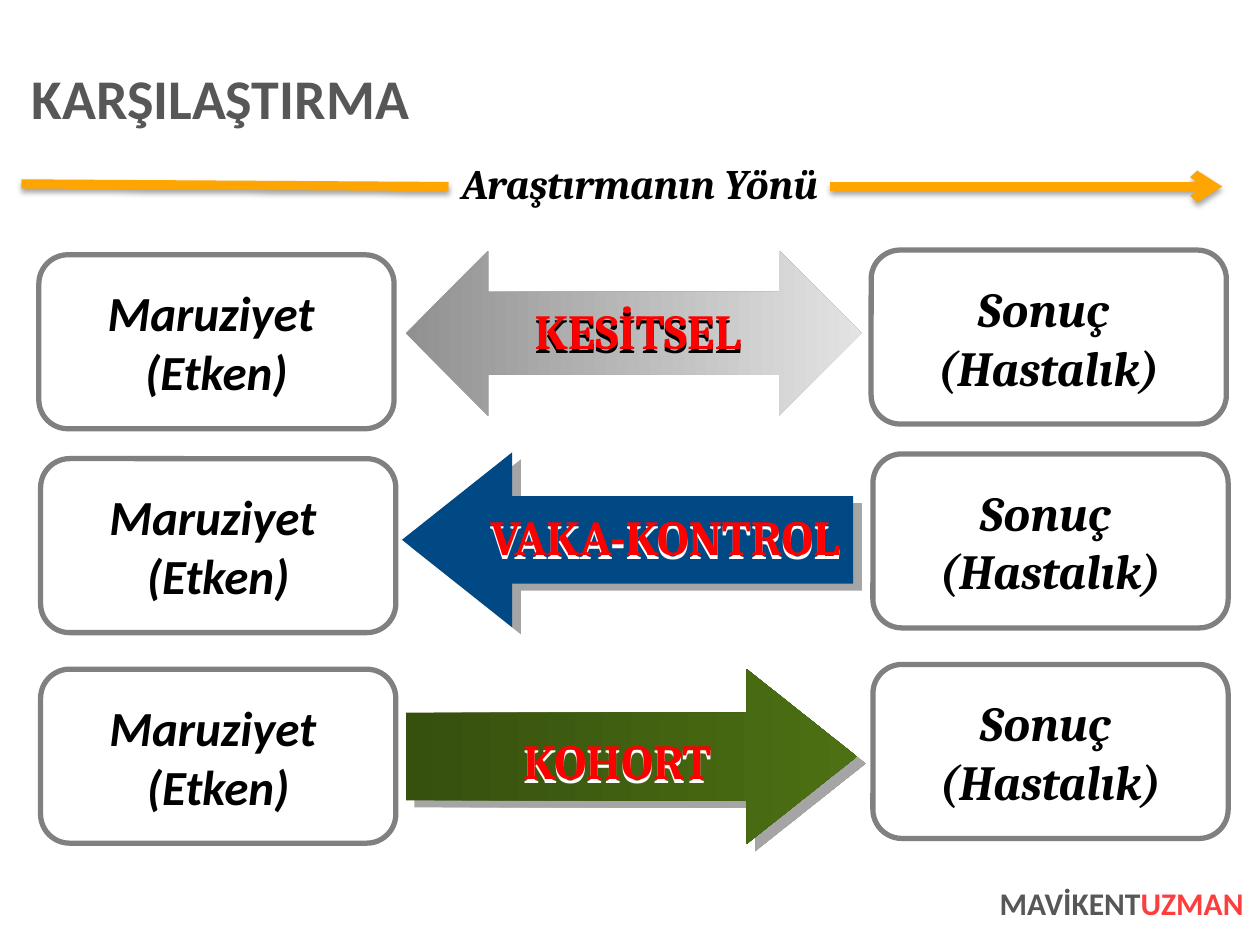
from dataclasses import dataclass

from lxml import etree
from pptx import Presentation
from pptx.dml.color import RGBColor
from pptx.enum import shapes, text
from pptx.oxml import ns
from pptx.util import Pt


@dataclass(frozen=True)
class Theme:
    sans: str = "Calibri"
    serif: str = "Cambria"
    title_size: int = 32
    box_size: int = 28
    direction_size: int = 24
    brand_size: int = 18
    grey: str = "575757"
    accent: str = "FB3E3E"
    black: str = "000000"
    white: str = "FFFFFF"
    label: str = "FF0000"
    border: str = "808080"
    direction: str = "FEA501"
    silver: tuple = ("919191", "E3E3E3")
    blue: tuple = ("004985",)
    green: tuple = ("36500E", "4C7013")
    # Shadows: colour, opacity %, blur, distance, angle
    line_shadow: tuple = ("000000", 35, 3.1, 1.8, 90)
    arrow_shadow: tuple = ("4D4D4D", 50, 0, 6.4, 39)


T = Theme()
MIDDLE, TOP = text.MSO_ANCHOR.MIDDLE, text.MSO_ANCHOR.TOP
LEFT, CENTER, RIGHT = text.PP_ALIGN.LEFT, text.PP_ALIGN.CENTER, text.PP_ALIGN.RIGHT


def rgb(value):
    return RGBColor.from_string(value)


def points(*values):
    return [Pt(v) for v in values]


def set_shadow(s, shadow=None):
    """Give the shape its own effect list, empty or with one outer shadow."""
    sp_pr = s._element.spPr
    for old in sp_pr.findall(ns.qn("a:effectLst")):
        sp_pr.remove(old)
    effects = etree.SubElement(sp_pr, ns.qn("a:effectLst"))
    if shadow:
        color, opacity, blur, distance, angle = shadow
        outer = etree.SubElement(
            effects, ns.qn("a:outerShdw"), blurRad=str(Pt(blur)),
            dist=str(Pt(distance)), dir=str(angle * 60000),
            algn="ctr", rotWithShape="0")
        clr = etree.SubElement(outer, ns.qn("a:srgbClr"), val=color)
        etree.SubElement(clr, ns.qn("a:alpha"), val=str(opacity * 1000))


def set_frame(s, anchor=TOP, wrap=True, margins=(7.2, 3.6)):
    tf = s.text_frame
    tf.auto_size = text.MSO_AUTO_SIZE.NONE
    tf.word_wrap = wrap
    tf.vertical_anchor = anchor
    tf.margin_left = tf.margin_right = Pt(margins[0])
    tf.margin_top = tf.margin_bottom = Pt(margins[1])
    return tf


def write(p, runs, font, size, align=CENTER, italic=False):
    """Fill a paragraph with bold runs given as (text, colour)."""
    p.alignment = align
    for words, color in runs:
        r = p.add_run()
        r.text = words
        r.font.name, r.font.size = font, Pt(size)
        r.font.bold, r.font.italic = True, italic
        r.font.color.rgb = rgb(color)


def add_text(slide, at, runs, font, size, align=CENTER, italic=False, **frame):
    s = slide.shapes.add_textbox(*points(*at))
    write(set_frame(s, **frame).paragraphs[0], runs, font, size, align, italic)
    return s


def add_title(slide, words):
    s = slide.shapes.title
    s.left, s.top, s.width, s.height = points(18, 32.4, 694, 51)
    p = set_frame(s, MIDDLE, margins=(0, 3.6)).paragraphs[0]
    p.line_spacing = 0.9
    write(p, [(words, T.grey)], T.sans, T.title_size, LEFT)


def add_box(slide, left, top, lines, font):
    s = slide.shapes.add_shape(shapes.MSO_SHAPE.ROUNDED_RECTANGLE,
                               *points(left, top, 203, 99.4))
    s.fill.background()
    s.line.color.rgb, s.line.width = rgb(T.border), Pt(3)
    set_shadow(s)
    tf = set_frame(s, MIDDLE, wrap=False)
    for i, line in enumerate(lines):
        p = tf.add_paragraph() if i else tf.paragraphs[0]
        write(p, [(line, T.black)], font, T.box_size, italic=True)


def add_arrow(slide, kind, at, colors, adjustments=(), shadow=None):
    s = slide.shapes.add_shape(kind, *points(*at))
    for i, value in enumerate(adjustments):
        s.adjustments[i] = value
    if len(colors) == 1:
        s.fill.solid()
        s.fill.fore_color.rgb = rgb(colors[0])
    else:
        s.fill.gradient()
        s.fill.gradient_angle = 0
        for stop, color in zip(s.fill.gradient_stops, colors):
            stop.color.rgb = rgb(color)
    s.line.fill.background()
    set_shadow(s, shadow)


def add_label(slide, at, words, shadow_color):
    s = add_text(slide, at, [(words, T.label)], T.serif, T.box_size,
                 anchor=MIDDLE, wrap=False)
    set_shadow(s, (shadow_color, 100, 0, 2.4, 90))


def add_line(slide, ends, arrow=False):
    s = slide.shapes.add_connector(shapes.MSO_CONNECTOR.STRAIGHT, *points(*ends))
    s.line.color.rgb, s.line.width = rgb(T.direction), Pt(5.25)
    if arrow:
        etree.SubElement(s.line._get_or_add_ln(), ns.qn("a:tailEnd"), type="arrow")
    set_shadow(s, T.line_shadow)


def main():
    prs = Presentation()
    prs.slide_width, prs.slide_height = points(720, 540)
    slide = prs.slides.add_slide(prs.slide_layouts[5])

    # Title and footer name
    add_title(slide, "KARŞILAŞTIRMA")
    add_text(slide, (544.3, 501.8, 166.3, 40.3),
             [("MAVİKENT", T.grey), ("UZMAN", T.accent)],
             T.sans, T.brand_size, RIGHT, margins=(0, 3.6))

    # Exposure and outcome boxes, one pair a row
    for left, top in ((22.2, 145.6), (23.2, 262.1), (23.2, 382.4)):
        add_box(slide, left, top, ("Maruziyet ", "(Etken)"), T.sans)
        add_box(slide, left + 475.6, top - 2.7, ("Sonuç ", "(Hastalık)"), T.serif)

    # Direction of the research
    add_line(slide, (474.5, 106.6, 698.4, 106.6), arrow=True)
    add_line(slide, (12.2, 105.1, 256.3, 106.6))
    add_text(slide, (246.2, 86.4, 239, 36.7), [("Araştırmanın Yönü", T.black)],
             T.serif, T.direction_size, italic=True)

    # Study designs
    kinds, head = shapes.MSO_SHAPE, (0.5, 0.63)
    add_arrow(slide, kinds.LEFT_RIGHT_ARROW, (231.8, 143.3, 260.6, 94.3), T.silver)
    add_label(slide, (241.9, 172.8, 239, 31.7), " KESİTSEL", T.black)
    add_arrow(slide, kinds.LEFT_ARROW, (229.7, 258.5, 257.8, 100), T.blue,
              head, T.arrow_shadow)
    add_label(slide, (268.6, 290.2, 216.7, 31.7), " VAKA-KONTROL", T.white)
    add_arrow(slide, kinds.RIGHT_ARROW, (231.8, 382.3, 257.8, 100), T.green,
              head, T.arrow_shadow)
    add_label(slide, (234.7, 418.3, 229.7, 31.7), " KOHORT", T.white)

    prs.save("out.pptx")


if __name__ == "__main__":
    main()
